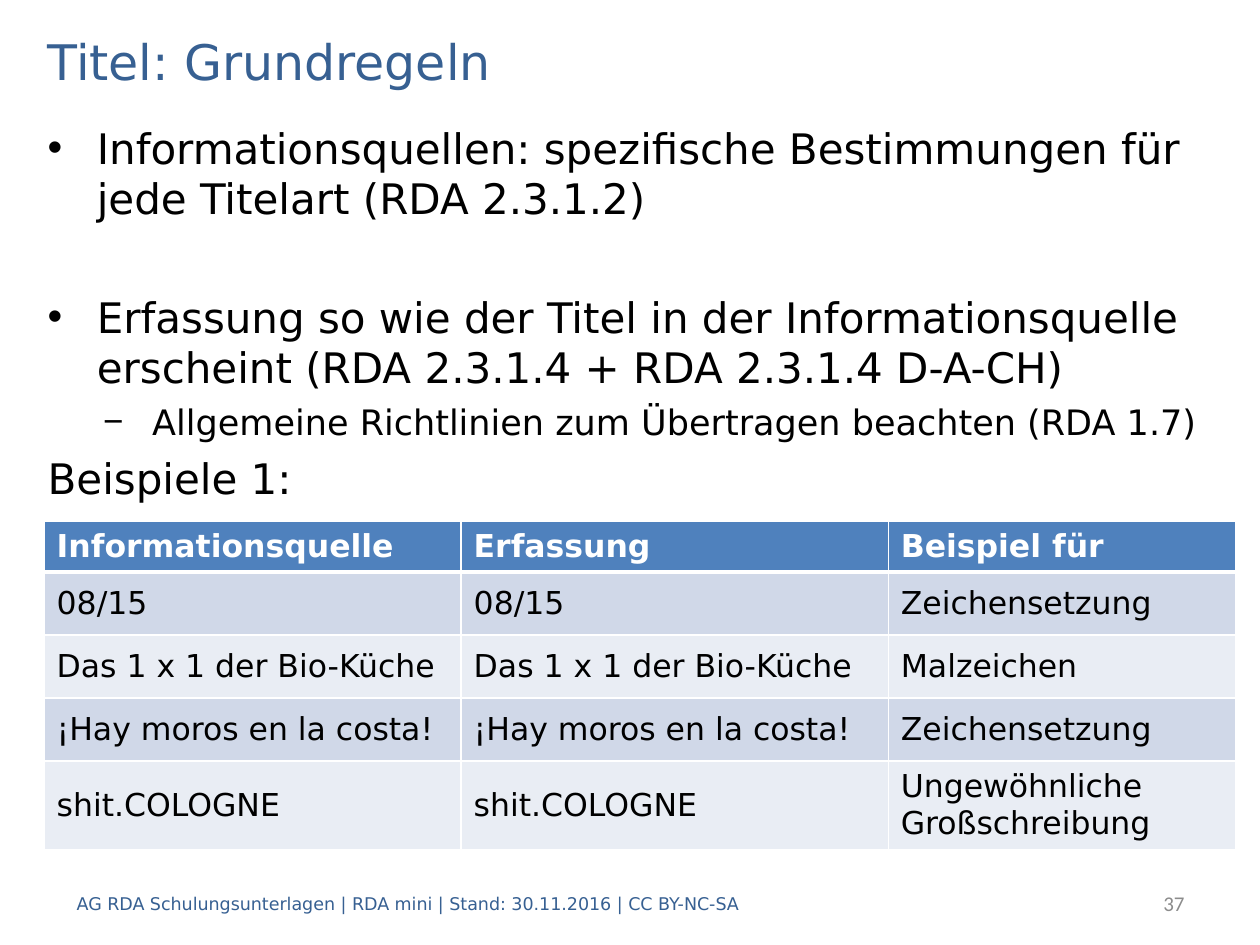
"""Build the slide on basic rules for recording titles."""
from lxml.etree import SubElement
from pptx import Presentation
from pptx.dml.color import RGBColor
from pptx.enum.text import MSO_ANCHOR as ANCHOR, PP_ALIGN as ALIGN
from pptx.oxml.ns import qn
from pptx.util import Inches, Pt

COLORS = {"title": "376092", "text": "000000", "number": "8C8C8C", "white": "FFFFFF",
          "header": "4F81BD", "odd": "D0D8E8", "even": "E9EDF4"}
FONT = "DejaVu Sans"
BODY = [
    ("Informationsquellen: spezifische Bestimmungen für jede Titelart (RDA 2.3.1.2)",
     24, "•", 0.39, 5.6),
    ("Erfassung so wie der Titel in der Informationsquelle erscheint "
     "(RDA 2.3.1.4 + RDA 2.3.1.4 D-A-CH)", 24, "•", 0.39, 39),
    ("Allgemeine Richtlinien zum Übertragen beachten (RDA 1.7)", 20, "−", 0.83, 4.7),
    ("Beispiele 1:", 24, None, 0.39, 5.6),
]
ROWS = [
    ("Informationsquelle", "Erfassung", "Beispiel für"),
    ("08/15", "08/15", "Zeichensetzung"),
    ("Das 1 x 1 der Bio-Küche", "Das 1 x 1 der Bio-Küche", "Malzeichen"),
    ("¡Hay moros en la costa!", "¡Hay moros en la costa!", "Zeichensetzung"),
    ("shit.COLOGNE", "shit.COLOGNE", "Ungewöhnliche Großschreibung"),
]
COL_WIDTHS = (3.31, 3.39, 2.76)
ROW_HEIGHTS = (0.35, 0.5, 0.5, 0.5, 0.5)


def rgb(name):
    return RGBColor.from_string(COLORS[name])


def write(p, text, size, color="text", name=FONT, bold=False):
    r = p.add_run()
    r.text = text
    for key, value in {"size": Pt(size), "name": name, "bold": bold}.items():
        setattr(r.font, key, value)
    r.font.color.rgb = rgb(color)


def add_box(s, box, anchor=ANCHOR.MIDDLE):
    tf = s.shapes.add_textbox(*map(Inches, box)).text_frame
    tf.word_wrap = True
    tf.vertical_anchor = anchor
    return tf


def add_line(s, box, text, size, color, name=FONT, align=ALIGN.LEFT):
    p = add_box(s, box).paragraphs[0]
    p.alignment = align
    write(p, text, size, color, name)


def add_body(s, box):
    tf = add_box(s, box, ANCHOR.TOP)
    for i, (text, size, bullet, margin, before) in enumerate(BODY):
        p = tf.add_paragraph() if i else tf.paragraphs[0]
        p.space_before = Pt(before)
        pPr = p._p.get_or_add_pPr()
        pPr.set("marL", str(Inches(margin)))
        pPr.set("indent", str(Inches(-0.39)))
        if bullet:
            SubElement(pPr, qn("a:buFont"), typeface="Arial")
            SubElement(pPr, qn("a:buChar"), char=bullet)
        write(p, text, size)


def set_borders(cell, widths):
    tcPr = cell._tc.get_or_add_tcPr()
    for side, width in widths.items():
        ln = SubElement(tcPr, qn(f"a:ln{side}"), w=str(Pt(width)))
        fill = SubElement(ln, qn("a:solidFill"))
        SubElement(fill, qn("a:srgbClr"), val=COLORS["white"])


def add_examples(s, box):
    table = s.shapes.add_table(len(ROWS), len(COL_WIDTHS), *map(Inches, box)).table
    for col, width in zip(table.columns, COL_WIDTHS):
        col.width = Inches(width)
    for i, (row, height) in enumerate(zip(table.rows, ROW_HEIGHTS)):
        row.height = Inches(height)
        header = i == 0
        fill = "header" if header else ("even", "odd")[i % 2]
        for cell, text in zip(row.cells, ROWS[i]):
            set_borders(cell, {"L": 1, "R": 1, "T": 3 if i == 1 else 1,
                               "B": 3 if header else 1})
            cell.fill.solid()
            cell.fill.fore_color.rgb = rgb(fill)
            cell.vertical_anchor = ANCHOR.TOP if header else ANCHOR.MIDDLE
            write(cell.text_frame.paragraphs[0], text, 18,
                  "white" if header else "text", bold=header)


def main():
    prs = Presentation()
    prs.slide_width, prs.slide_height = Inches(10), Inches(7.5)
    s = prs.slides.add_slide(prs.slide_layouts[6])
    add_line(s, (0.28, 0.2, 9.45, 0.56), "Titel: Grundregeln", 28, "title")
    add_line(s, (7.91, 6.97, 1.59, 0.4), "37", 12, "number", "Calibri", ALIGN.RIGHT)
    add_line(s, (0.51, 6.97, 6.69, 0.4),
             "AG RDA Schulungsunterlagen | RDA mini | Stand: 30.11.2016 | CC BY-NC-SA",
             10, "title")
    add_body(s, (0.28, 0.92, 9.45, 5.98))
    add_examples(s, (0.35, 4.14, sum(COL_WIDTHS), sum(ROW_HEIGHTS)))
    prs.save("out.pptx")


if __name__ == "__main__":
    main()
